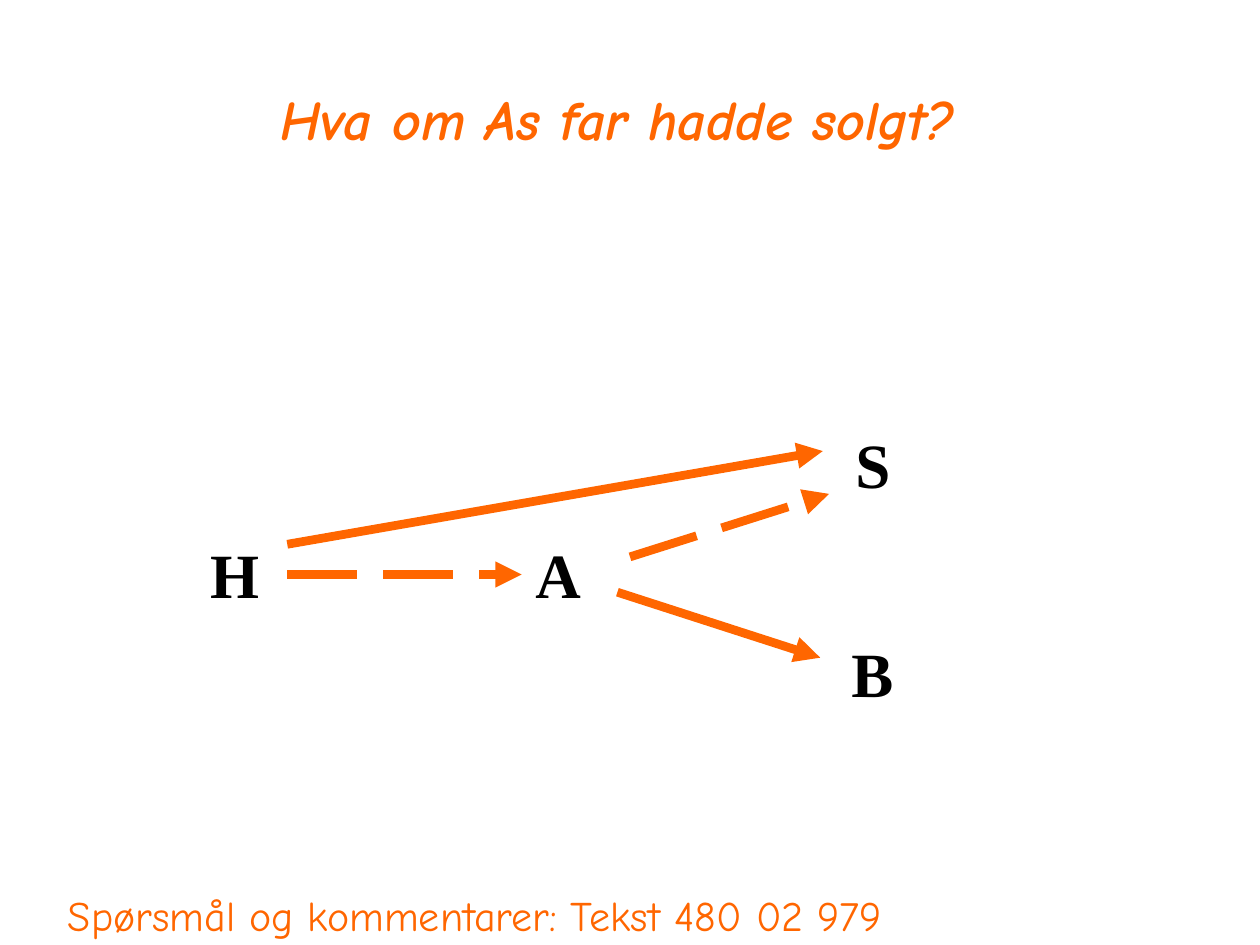
from lxml import etree
from pptx import Presentation
from pptx import util as u
from pptx.dml.color import RGBColor
from pptx.enum import dml, shapes, text
from pptx.oxml import ns

COLUMNS = 10
ORANGE, BLACK, WHITE = "FF6600", "000000", "FFFFFF"
ACCENT_FONT, LETTER_FONT = "Comic Neue", "Times New Roman"

presentation = Presentation()
presentation.slide_width, presentation.slide_height = u.Inches(10), u.Inches(7.5)
UNIT = presentation.slide_width // COLUMNS


def grid(*cells):
    """Turn columns or rows of the square slide grid into lengths."""
    return [u.Emu(round(cell * UNIT)) for cell in cells]


def color(value):
    return RGBColor.from_string(value)


def write(shape, words, frame_format, font_format, font_color):
    frame = shape.text_frame
    for name, value in frame_format.items():
        setattr(frame, name, value)
    paragraph = frame.paragraphs[0]
    run = paragraph.add_run()
    run.text = words
    for name, value in font_format.items():
        setattr(run.font, name, value)
    run.font.color.rgb = color(font_color)
    return paragraph


def add_text(slide, box, words, wrap, font_format, font_color):
    shape = slide.shapes.add_textbox(*grid(*box))
    write(shape, words, {"word_wrap": wrap}, font_format, font_color)


def add_arrow(slide, start, end, dashed):
    arrow = slide.shapes.add_connector(
        shapes.MSO_CONNECTOR.STRAIGHT, *grid(*start, *end))
    arrow.line.color.rgb = color(ORANGE)
    arrow.line.width = u.Pt(5)
    if dashed:
        arrow.line.dash_style = dml.MSO_LINE.LONG_DASH
    head = etree.SubElement(arrow.line._get_or_add_ln(), ns.qn("a:tailEnd"))
    head.set("type", "triangle")
    etree.SubElement(arrow._element.spPr, ns.qn("a:effectLst"))


def add_title(slide, box):
    title = slide.shapes.title
    title.left, title.top, title.width, title.height = grid(*box)
    title.fill.solid()
    title.fill.fore_color.rgb = color(WHITE)
    paragraph = write(
        title, "Hva om As far hadde solgt?",
        {"word_wrap": False, "vertical_anchor": text.MSO_ANCHOR.MIDDLE,
         "auto_size": text.MSO_AUTO_SIZE.NONE},
        {"name": ACCENT_FONT, "size": u.Pt(32), "bold": True, "italic": True},
        ORANGE)
    paragraph.alignment = text.PP_ALIGN.CENTER
    paragraph.line_spacing = 0.9


def add_sales_diagram(slide, left, top):
    """Draw the parties as letters and the sales between them as arrows."""
    letter_font = {"name": LETTER_FONT, "size": u.Pt(36), "bold": True}
    parties = {"H": (0.07, 0.9, 0.59), "A": (2.65, 0.9, 0.56),
               "S": (5.19, 0.03, 0.48), "B": (5.16, 1.69, 0.53)}
    for letter, (x, y, width) in parties.items():
        add_text(slide, (left + x, top + y, width, 0.7), letter, False,
                 letter_font, BLACK)

    sales = [((0.78, 1.02), (5.03, 0.28), False),  # H to S
             ((0.78, 1.26), (2.64, 1.26), True),   # H to A
             ((3.5, 1.12), (5.08, 0.62), True),    # A to S
             ((3.4, 1.4), (5.01, 1.92), False)]    # A to B
    for start, end, dashed in sales:
        add_arrow(slide, *[(left + x, top + y) for x, y in (start, end)], dashed)


def add_contact_line(slide, box):
    add_text(slide, box, "Spørsmål og kommentarer: Tekst 480 02 979", True,
             {"name": ACCENT_FONT, "size": u.Pt(24)}, ORANGE)


def main():
    slide = presentation.slides.add_slide(presentation.slide_layouts[5])
    add_contact_line(slide, (0.44, 7.01, 9.8, 0.5))
    add_title(slide, (1.71, 0.68, 6.38, 0.58))
    add_sales_diagram(slide, left=1.5, top=3.3)
    presentation.save("out.pptx")


if __name__ == "__main__":
    main()
